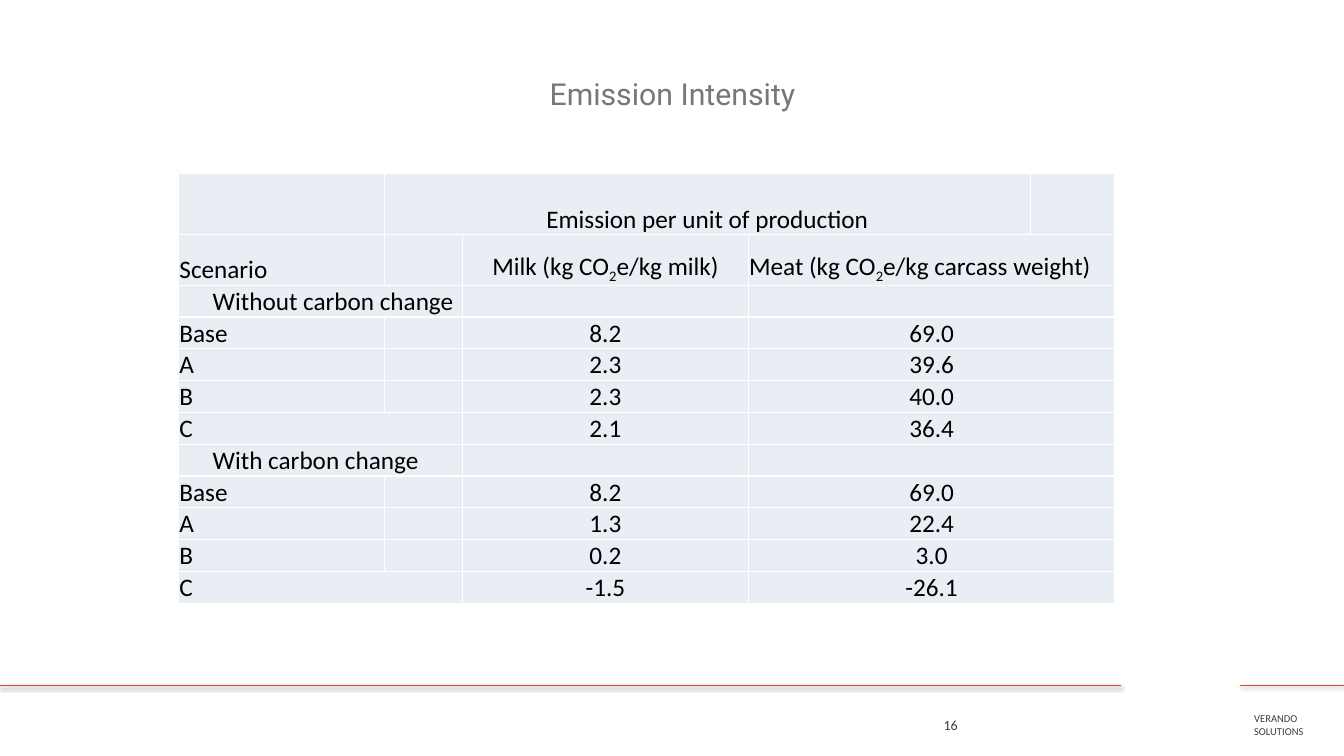
from dataclasses import dataclass

from lxml.etree import SubElement
from pptx import Presentation
from pptx.dml.color import RGBColor
from pptx.enum.shapes import MSO_CONNECTOR
from pptx.enum.text import MSO_ANCHOR, PP_ALIGN
from pptx.oxml import parse_xml
from pptx.oxml.ns import nsdecls, qn
from pptx.slide import Slide
from pptx.table import Table, _Cell
from pptx.text.text import TextFrame
from pptx.util import Inches, Pt

COLORS = {
    "rule": "DA4627",
    "shadow": "000000",
    "title": "777777",
    "footer": "3C3C3B",
    "text": "000000",
    "cell": "E9EDF4",
    "border": "FFFFFF",
}
COL_WIDTHS = [2.04, 0.78, 2.83, 2.8, 0.84]
ROW_HEIGHTS = [0.61, 0.5] + [0.31] * 10


@dataclass
class Row:
    label: str
    milk: str = ""
    meat: str = ""
    wide_label: bool = False
    indent: float = 0
    meat_align: PP_ALIGN = PP_ALIGN.CENTER


@dataclass
class Label:
    text: str
    left: float
    top: float
    width: float
    height: float
    size: float
    color: str
    font: str = "Calibri"
    align: PP_ALIGN = PP_ALIGN.LEFT


@dataclass
class Rule:
    start: float
    end: float


ROWS = [
    Row("Scenario", "Milk (kg CO₂e/kg milk)", "Meat (kg CO₂e/kg carcass weight)",
        meat_align=PP_ALIGN.LEFT),
    Row("Without carbon change", wide_label=True, indent=0.34),
    Row("Base", "8.2", "69.0"),
    Row("A", "2.3", "39.6"),
    Row("B", "2.3", "40.0"),
    Row("C", "2.1", "36.4", wide_label=True),
    Row("With carbon change", wide_label=True, indent=0.34),
    Row("Base", "8.2", "69.0"),
    Row("A", "1.3", "22.4"),
    Row("B", "0.2", "3.0"),
    Row("C", "-1.5", "-26.1", wide_label=True),
]
LABELS = [
    Label("Emission Intensity", 0.67, 0.3, 12, 1.25, 21.6, "title", "Roboto", PP_ALIGN.CENTER),
    Label("VERANDO SOLUTIONS", 12.34, 6.99, 0.82, 0.4, 7.5, "footer"),
    Label("16", 9.26, 6.99, 0.61, 0.4, 10, "footer"),
]
RULES = [Rule(13.33, 12.3), Rule(11.12, 0)]


def write(tf: TextFrame, text: str, *, size: float = 18, color: str = "text",
          font: str = "Calibri", align: PP_ALIGN = PP_ALIGN.LEFT) -> None:
    """Fill the first paragraph, setting ₂ as a subscript run."""
    p = tf.paragraphs[0]
    p.alignment = align
    before, subscript, after = text.partition("₂")
    for part in (before, subscript, after):
        if not part:
            continue
        r = p.add_run()
        r.text = "2" if part == "₂" else part
        r.font.size = Pt(size)
        r.font.name = font
        r.font.color.rgb = RGBColor.from_string(COLORS[color])
        if part == "₂":
            r._r.get_or_add_rPr().set("baseline", "-25000")
    if not text:
        # Keeps an empty cell from stretching its row
        SubElement(p._p, qn("a:endParaRPr"), sz="1000")


def add_label(s: Slide, label: Label) -> None:
    box = s.shapes.add_textbox(Inches(label.left), Inches(label.top),
                               Inches(label.width), Inches(label.height))
    tf = box.text_frame
    tf.word_wrap = True
    tf.vertical_anchor = MSO_ANCHOR.MIDDLE
    write(tf, label.text, size=label.size, color=label.color,
          font=label.font, align=label.align)


def add_rule(s: Slide, rule: Rule) -> None:
    line = s.shapes.add_connector(MSO_CONNECTOR.STRAIGHT, Inches(rule.start), Inches(6.8),
                                  Inches(rule.end), Inches(6.8))
    line.line.color.rgb = RGBColor.from_string(COLORS["rule"])
    line.line.width = Pt(0.75)
    line._element.spPr.append(parse_xml(
        f'<a:effectLst {nsdecls("a")}>'
        f'<a:outerShdw blurRad="{Pt(3.1)}" dist="{Pt(1.6)}" dir="5400000" rotWithShape="0">'
        f'<a:srgbClr val="{COLORS["shadow"]}"><a:alpha val="38000"/></a:srgbClr>'
        '</a:outerShdw></a:effectLst>'))


def style_cell(cell: _Cell) -> None:
    cell.margin_left = cell.margin_right = cell.margin_top = Inches(0.01)
    cell.margin_bottom = 0
    cell.vertical_anchor = MSO_ANCHOR.BOTTOM
    tcPr = cell._tc.get_or_add_tcPr()
    for side in ("lnL", "lnR", "lnT", "lnB"):
        tcPr.append(parse_xml(
            f'<a:{side} {nsdecls("a")} w="{Pt(1)}"><a:solidFill>'
            f'<a:srgbClr val="{COLORS["border"]}"/></a:solidFill></a:{side}>'))
    cell.fill.solid()
    cell.fill.fore_color.rgb = RGBColor.from_string(COLORS["cell"])


def fill_table(table: Table) -> None:
    texts = {(0, 1): ("Emission per unit of production", PP_ALIGN.CENTER)}
    table.cell(0, 1).merge(table.cell(0, 3))
    for i, row in enumerate(ROWS, start=1):
        table.cell(i, 3).merge(table.cell(i, 4))
        if row.wide_label:
            table.cell(i, 0).merge(table.cell(i, 1))
        if row.indent:
            table.cell(i, 0).margin_left = Inches(row.indent)
        texts[i, 0] = (row.label, PP_ALIGN.LEFT)
        texts[i, 2] = (row.milk, PP_ALIGN.CENTER)
        texts[i, 3] = (row.meat, row.meat_align)
    for i in range(len(ROW_HEIGHTS)):
        for j in range(len(COL_WIDTHS)):
            text, align = texts.get((i, j), ("", PP_ALIGN.LEFT))
            write(table.cell(i, j).text_frame, text, align=align)


def add_emission_table(s: Slide) -> None:
    frame = s.shapes.add_table(len(ROW_HEIGHTS), len(COL_WIDTHS), Inches(1.77), Inches(1.72),
                               Inches(sum(COL_WIDTHS)), Inches(sum(ROW_HEIGHTS)))
    table = frame.table
    table.first_row = table.horz_banding = False
    for column, width in zip(table.columns, COL_WIDTHS):
        column.width = Inches(width)
    for row, height in zip(table.rows, ROW_HEIGHTS):
        row.height = Inches(height)
        for cell in row.cells:
            style_cell(cell)
    fill_table(table)


def main() -> None:
    prs = Presentation()
    prs.slide_width, prs.slide_height = Inches(13.33), Inches(7.5)
    s = prs.slides.add_slide(prs.slide_layouts[6])
    for rule in RULES:
        add_rule(s, rule)
    add_emission_table(s)
    for label in LABELS:
        add_label(s, label)
    prs.save("out.pptx")


if __name__ == "__main__":
    main()
